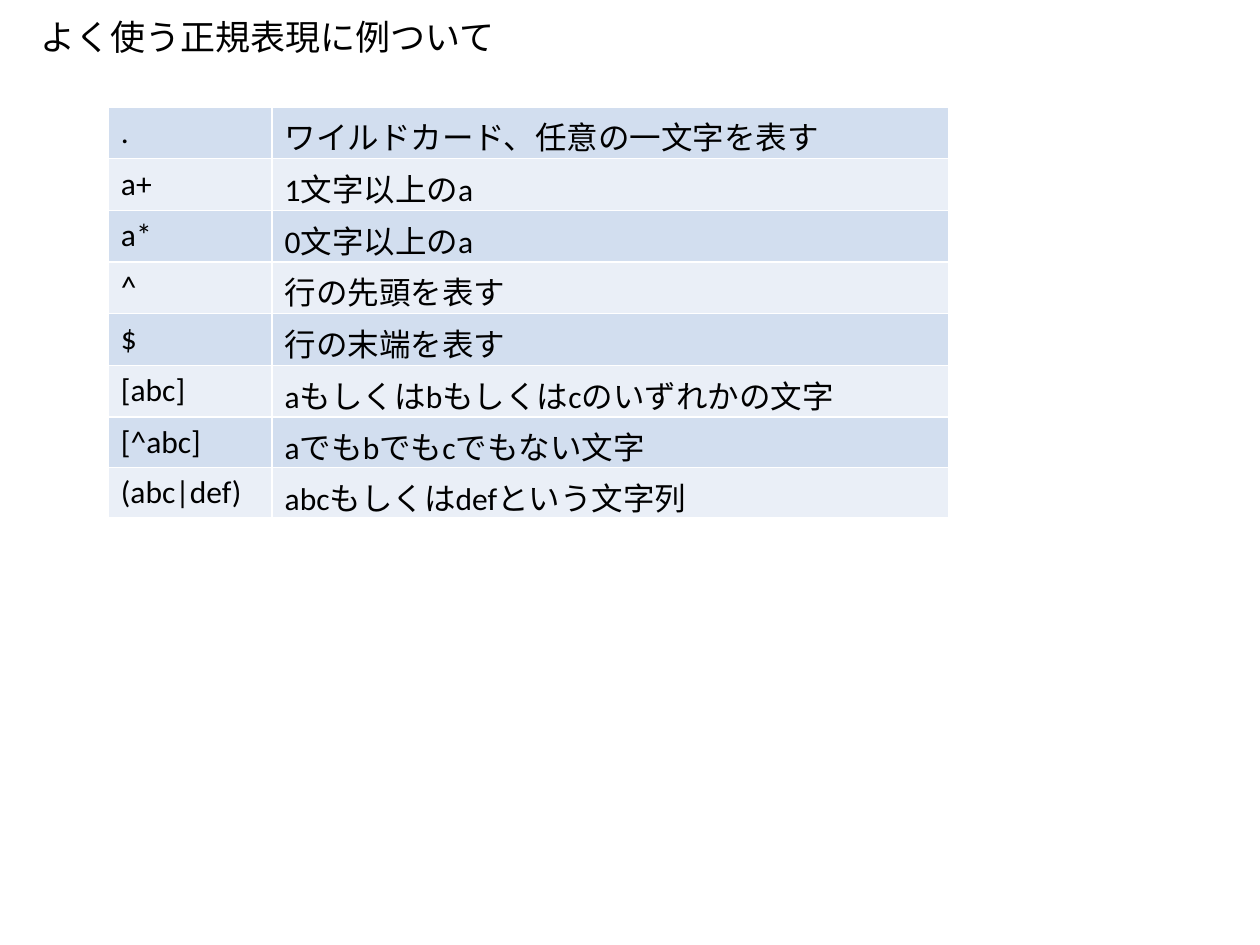
from typing import NamedTuple

from pptx import Presentation
from pptx import util as u
from pptx.dml.color import RGBColor
from pptx.enum import text

FONT = "Calibri"
BLACK = RGBColor(0x00, 0x00, 0x00)
BANDS = (RGBColor(0xD2, 0xDE, 0xEF), RGBColor(0xEA, 0xEF, 0xF7))


class Pattern(NamedTuple):
    regex: str
    meaning: str
    height: float = 0.41


PATTERNS = [
    Pattern(".", "ワイルドカード、任意の一文字を表す"),
    Pattern("a+", "1文字以上のa"),
    Pattern("a*", "0文字以上のa"),
    Pattern("^", "行の先頭を表す"),
    Pattern("$", "行の末端を表す"),
    Pattern("[abc]", "aもしくはbもしくはcのいずれかの文字"),
    Pattern("[^abc]", "aでもbでもcでもない文字", 0.39),
    Pattern("(abc|def)", "abcもしくはdefという文字列", 0.39),
]
COLUMN_WIDTHS = (1.3, 5.37)


def set_text(tf, content: str, size: int) -> None:
    tf.text = content
    p = tf.paragraphs[0]
    p.alignment = text.PP_ALIGN.LEFT
    font = p.runs[0].font
    font.name, font.size, font.bold = FONT, u.Pt(size), False
    font.color.rgb = BLACK


def add_title(s, content: str) -> None:
    sp = s.shapes.title
    sp.left, sp.top = u.Inches(0.22), u.Inches(0.07)
    sp.width, sp.height = u.Inches(9.49), u.Inches(0.44)
    tf = sp.text_frame
    tf.word_wrap = True
    tf.auto_size = text.MSO_AUTO_SIZE.SHAPE_TO_FIT_TEXT
    tf.vertical_anchor = text.MSO_ANCHOR.TOP
    set_text(tf, content, 20)


def add_pattern_table(s, patterns: list[Pattern]) -> None:
    height = sum(pattern.height for pattern in patterns)
    table = s.shapes.add_table(
        len(patterns), len(COLUMN_WIDTHS), u.Inches(0.86), u.Inches(0.85),
        u.Inches(sum(COLUMN_WIDTHS)), u.Inches(height)).table
    # The table style supplies the thin white borders
    table.first_row = False
    for column, width in zip(table.columns, COLUMN_WIDTHS):
        column.width = u.Inches(width)
    for i, (row, pattern) in enumerate(zip(table.rows, patterns)):
        row.height = u.Inches(pattern.height)
        for cell, content in zip(row.cells, (pattern.regex, pattern.meaning)):
            cell.fill.solid()
            cell.fill.fore_color.rgb = BANDS[i % 2]
            set_text(cell.text_frame, content, 18)


def main() -> None:
    prs = Presentation()
    prs.slide_width, prs.slide_height = u.Inches(10), u.Inches(7.5)
    s = prs.slides.add_slide(prs.slide_layouts[5])  # Title Only
    add_title(s, "よく使う正規表現に例ついて")
    add_pattern_table(s, PATTERNS)
    prs.save("out.pptx")


if __name__ == "__main__":
    main()
